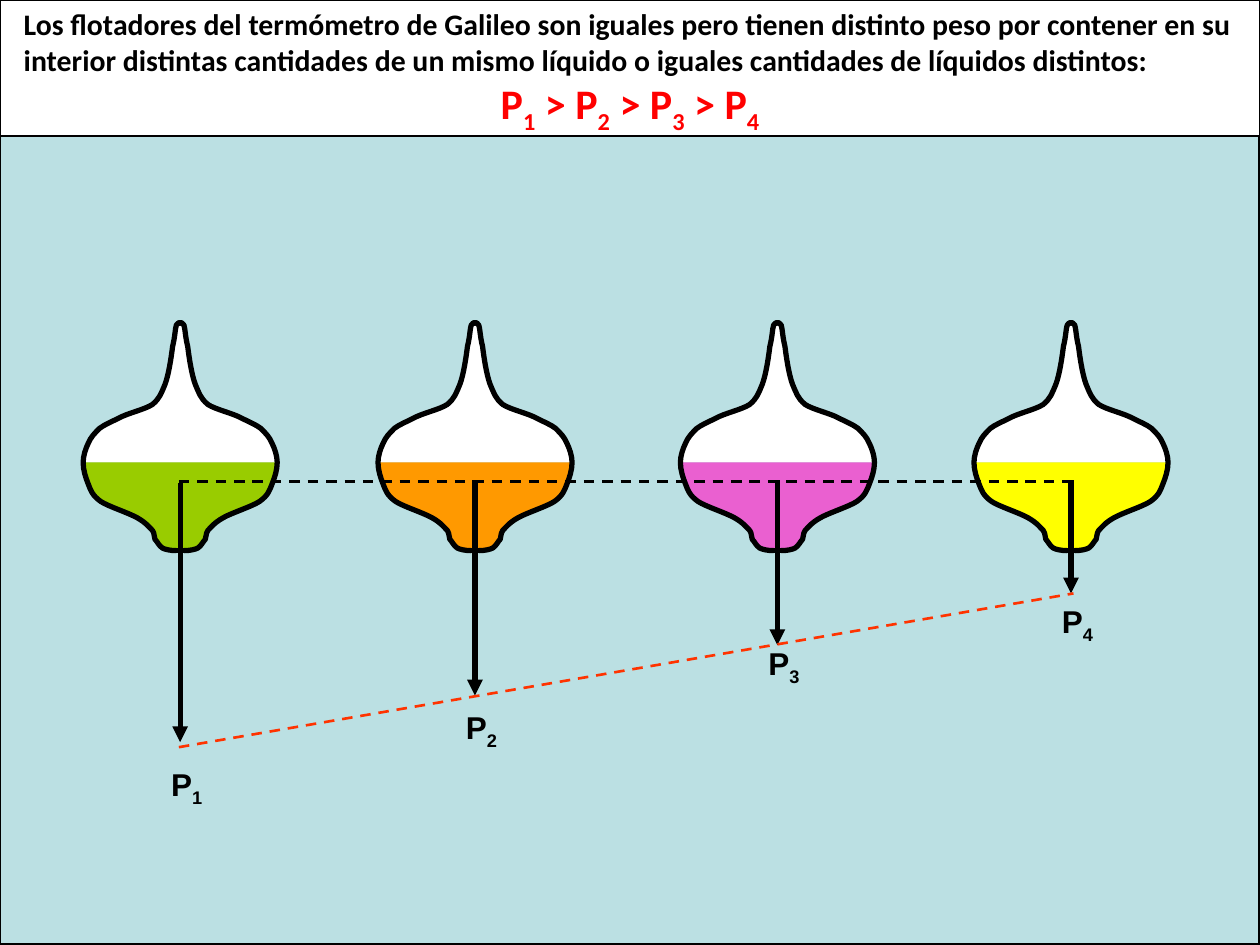
import pptx
import pptx.util
import pptx.dml.color
import pptx.enum.dml
import pptx.enum.shapes
import pptx.enum.text
import pptx.oxml.ns
from lxml import etree

RGB = pptx.dml.color.RGBColor
BLACK = RGB(0x00, 0x00, 0x00)
WHITE = RGB(0xFF, 0xFF, 0xFF)
GREY = RGB(0x96, 0x96, 0x96)
WATER = RGB(0xBB, 0xE0, 0xE3)
RED = RGB(0xFF, 0x00, 0x00)
ORANGE_RED = RGB(0xFF, 0x33, 0x00)
GREEN = RGB(0x99, 0xCC, 0x00)
ORANGE = RGB(0xFF, 0x99, 0x00)
PINK = RGB(0xEA, 0x60, 0xD0)
YELLOW = RGB(0xFF, 0xFF, 0x00)

PX = 9144  # EMU per px, 100 px to the inch

# Right half of a floater as Bezier points: x from its axis, y on the slide
GLASS = [
    (-2, 257),
    (-1, 256), (1, 255), (3, 258), (4, 261), (4, 267), (6, 275),
    (7, 283), (9, 297), (12, 305), (15, 312), (16, 316), (22, 321),
    (28, 325), (42, 328), (49, 332), (55, 335), (60, 337), (64, 340),
    (68, 344), (71, 347), (73, 352), (75, 356), (77, 362), (77, 367),
]
LIQUID = [
    (77, 367),
    (77, 373), (75, 379), (73, 384), (71, 389), (70, 393), (63, 398),
    (57, 402), (41, 407), (34, 411), (27, 415), (25, 418), (22, 421),
    (20, 424), (21, 426), (20, 428), (18, 430), (17, 433), (14, 435),
    (12, 436), (8, 437), (3, 437),
]
PROFILE = GLASS + LIQUID[1:]
BASE = [(4, 437), (1, 437), (-1, 437), (-4, 437)]

# Axis, liquid colour, arrow start, arrow tip, label top
FLOATERS = [
    (143, GREEN, 383, 589, 602),
    (377, ORANGE, 381, 552, 557),
    (617, PINK, 381, 512, 506),
    (850, YELLOW, 381, 471, 473),
]

qn = pptx.oxml.ns.qn


def px(n):
    return pptx.util.Emu(round(n * PX))


def mirror(points):
    return [(-x, y) for x, y in points]


def both_halves(points):
    """The half and its mirror image, joined by a straight Bezier."""
    other = mirror(points)[::-1]
    return points + [points[-1], other[0]] + other


def add_curve(shapes, axis, points, fill=None):
    """A filled area without a line, or an open black stroke."""
    pts = [(px(axis + x), px(y)) for x, y in points]
    fb = shapes.build_freeform(*pts[0])
    fb.add_line_segments(pts[1:], close=fill is not None)
    sp = fb.convert_to_shape()
    # Each three segments become one Bezier
    outline = sp._element.find(".//" + qn("a:path"))
    segments = outline.findall(qn("a:lnTo"))
    for i in range(0, len(segments), 3):
        bezier = outline.makeelement(qn("a:cubicBezTo"))
        segments[i].addprevious(bezier)
        for segment in segments[i:i + 3]:
            bezier.append(segment[0])
            outline.remove(segment)
    sp.shadow.inherit = False
    if fill is None:
        sp.fill.background()
        sp.line.color.rgb = BLACK
        sp.line.width = pptx.util.Pt(3)
    else:
        sp.fill.solid()
        sp.fill.fore_color.rgb = fill
        sp.line.fill.background()


def add_line(shapes, start, end, color, width, dashed=False, arrow=False):
    cn = shapes.add_connector(pptx.enum.shapes.MSO_CONNECTOR.STRAIGHT,
                              *map(px, start + end))
    cn.line.color.rgb = color
    cn.line.width = pptx.util.Pt(width)
    if dashed:
        cn.line.dash_style = pptx.enum.dml.MSO_LINE.DASH
    sp_pr = cn._element.spPr
    if arrow:
        etree.SubElement(sp_pr.find(qn("a:ln")), qn("a:tailEnd"), type="triangle")
    etree.SubElement(sp_pr, qn("a:effectLst"))


def add_rect(shapes, left, top, width, height, fill, line_width):
    sp = shapes.add_shape(pptx.enum.shapes.MSO_SHAPE.RECTANGLE,
                          *map(px, (left, top, width, height)))
    sp.shadow.inherit = False
    sp.fill.solid()
    sp.fill.fore_color.rgb = fill
    sp.line.color.rgb = BLACK
    sp.line.width = pptx.util.Pt(line_width)
    return sp


def add_run(p, text, size, font, color, subscript=False):
    r = p.add_run()
    r.text = text
    r.font.size = pptx.util.Pt(size)
    r.font.name = font
    r.font.bold = True
    r.font.color.rgb = color
    if subscript:
        r._r.get_or_add_rPr().set("baseline", "-25000")


def add_weight(p, number, size, font, color):
    add_run(p, "P", size, font, color)
    add_run(p, str(number), size, font, color, subscript=True)


def add_floater(slide, number, axis, liquid, arrow_top, arrow_tip, label_top):
    shapes = slide.shapes.add_group_shape().shapes
    # Glass and liquid
    for half, fill in ((GLASS, WHITE), (LIQUID, liquid)):
        add_curve(shapes, axis, both_halves(half), fill)
    # Contour and base
    for stroke in (mirror(PROFILE), PROFILE, BASE):
        add_curve(shapes, axis, stroke)
    # Weight arrow and its label
    add_line(shapes, (axis, arrow_top), (axis, arrow_tip), BLACK, 3, arrow=True)
    box = shapes.add_textbox(*map(px, (axis - 17, label_top, 67, 40)))
    tf = box.text_frame
    tf.word_wrap = True
    add_weight(tf.paragraphs[0], number, 18, "Arial", BLACK)


def add_header(slide):
    sp = add_rect(slide.shapes, 0, 0, 1000, 108, WHITE, 0.75)
    tf = sp.text_frame
    tf.word_wrap = True
    tf.vertical_anchor = pptx.enum.text.MSO_ANCHOR.TOP
    p = tf.paragraphs[0]
    p.alignment = pptx.enum.text.PP_ALIGN.LEFT
    p._p.get_or_add_pPr().set("marL", str(px(9)))
    add_run(p, "Los flotadores del termómetro de Galileo son iguales pero tienen "
               "distinto peso por contener en su interior distintas cantidades de un "
               "mismo líquido o iguales cantidades de líquidos distintos:",
            17, "Calibri", BLACK)
    p = tf.add_paragraph()
    p.alignment = pptx.enum.text.PP_ALIGN.CENTER
    for number in range(1, len(FLOATERS) + 1):
        if number > 1:
            add_run(p, " > ", 24, "Calibri", RED)
        add_weight(p, number, 24, "Calibri", RED)


def main():
    prs = pptx.Presentation()
    prs.slide_width, prs.slide_height = px(1000), px(750)
    slide = prs.slides.add_slide(prs.slide_layouts[6])
    slide.background.fill.solid()
    slide.background.fill.fore_color.rgb = GREY

    # Water and floaters
    add_rect(slide.shapes, 0, 29, 1000, 721, WATER, 1.75)
    for number, floater in enumerate(FLOATERS, 1):
        add_floater(slide, number, *floater)

    # Common level, header and line through the arrow tips
    add_line(slide.shapes, (142, 382), (850, 382), BLACK, 1.5, dashed=True)
    add_header(slide)
    add_line(slide.shapes, (142, 593), (852, 471), ORANGE_RED, 1.5, dashed=True)
    prs.save("out.pptx")


if __name__ == "__main__":
    main()
